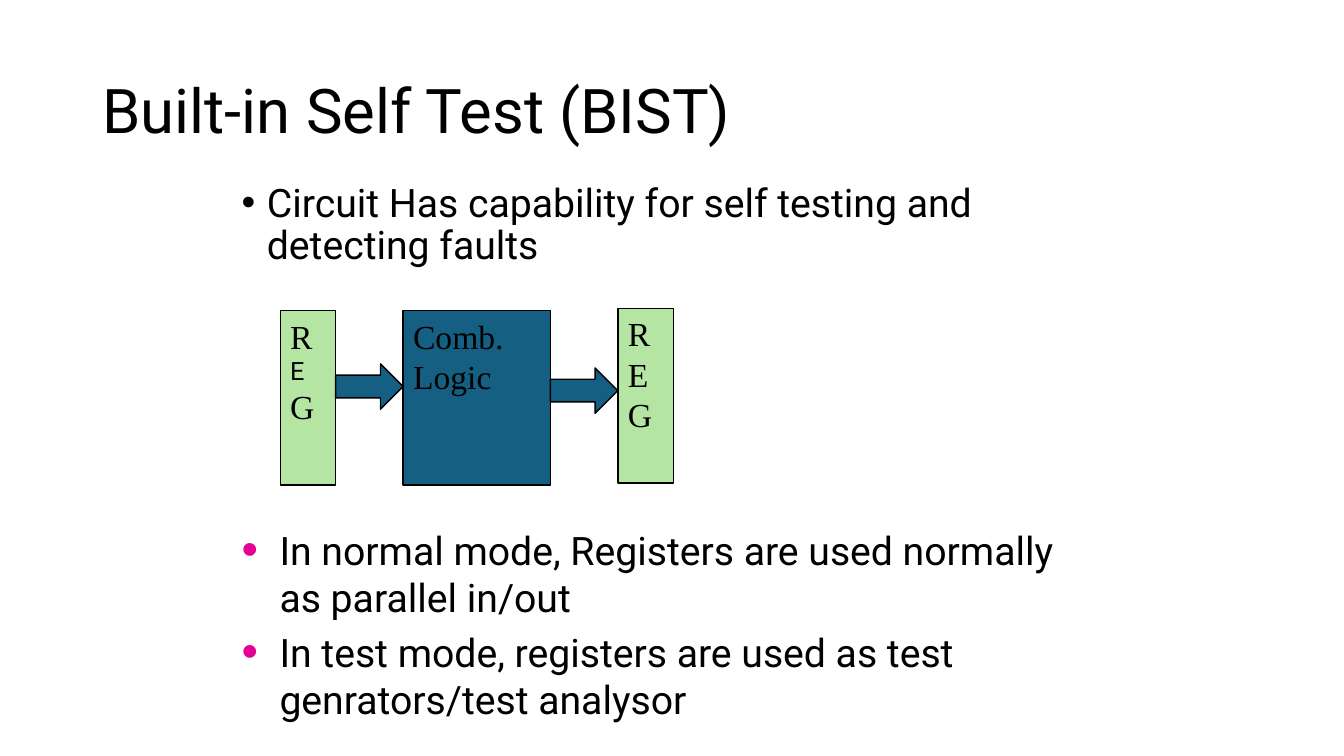
from lxml import etree
from pptx import Presentation
from pptx.dml.color import RGBColor
from pptx.enum import shapes, text
from pptx.oxml import ns
from pptx.util import Pt

# Content: boxes are left, top, width, height in points
TITLE = ("Built-in Self Test (BIST)", (66.2, 28.8, 828, 104.4))
INTRO = (["Circuit Has capability for self testing and detecting faults"],
         (165.6, 127.4, 612, 79.9))
MODES = (["In normal mode, Registers are used normally as parallel in/out",
          "In test mode, registers are used as test genrators/test analysor"],
         (165.6, 372.2, 612, 79.9))
BLACK, BLUE, GREEN, PINK = "000000", "156082", "B4E5A2", "E50093"
SERIF, SANS = "Times New Roman", "Roboto"

# Blocks: left, top, width, fill, lines as (text, font, size)
BLOCK_HEIGHT = 124.6
BLOCKS = [
    (288, 221.8, 105.1, BLUE, [("Comb. Logic", SERIF, 24)]),
    (200.2, 221.8, 39.6, GREEN, [("R", SERIF, 24), ("E", SANS, 18), ("G", SERIF, 24)]),
    (441.4, 220.3, 39.6, GREEN, [("REG", SERIF, 24)]),
]
# Arrows: left, top
ARROWS = [(239.8, 259.9), (393.1, 262.8)]
ARROW_SIZE = (48.2, 32.4)

deck = Presentation()
deck.slide_width, deck.slide_height = Pt(960), Pt(540)
slide = deck.slides.add_slide(deck.slide_layouts[6])


def color(hex_string):
    return RGBColor.from_string(hex_string)


def write(frame, lines):
    """Fill a frame with one paragraph per (text, font, size)."""
    frame.word_wrap = True
    frame.text = "\n".join(words for words, _, _ in lines)
    for paragraph, (_, font, size) in zip(frame.paragraphs, lines):
        paragraph.alignment = text.PP_ALIGN.LEFT
        letters = paragraph.runs[0].font
        letters.name, letters.size = font, Pt(size)
        letters.color.rgb = color(BLACK)


def add_text(box, lines):
    frame = slide.shapes.add_textbox(*map(Pt, box)).text_frame
    write(frame, lines)
    return frame


def add_bullets(bullets, box, indent, before, spacing=None, tint=None):
    frame = add_text(box, [(bullet, SANS, 28) for bullet in bullets])
    for paragraph in frame.paragraphs:
        paragraph.space_before = Pt(before)
        paragraph.line_spacing = spacing
        props = paragraph._p.get_or_add_pPr()
        props.set("marL", str(Pt(indent)))
        props.set("indent", str(Pt(-indent)))
        if tint:
            bullet_color = etree.SubElement(props, ns.qn("a:buClr"))
            etree.SubElement(bullet_color, ns.qn("a:srgbClr"), val=tint)
            etree.SubElement(props, ns.qn("a:buSzPct"), val="120000")
        etree.SubElement(props, ns.qn("a:buFont"), typeface="Arial")
        etree.SubElement(props, ns.qn("a:buChar"), char="•")


def add_outlined(kind, box, fill):
    shape = slide.shapes.add_shape(kind, *map(Pt, box))
    shape.shadow.inherit = False
    shape.fill.solid()
    shape.fill.fore_color.rgb = color(fill)
    shape.line.color.rgb = color(BLACK)
    shape.line.width = Pt(1)
    return shape


# Title and opening bullet
heading = add_text(TITLE[1], [(TITLE[0], SANS, 44)])
heading.vertical_anchor = text.MSO_ANCHOR.MIDDLE
heading.paragraphs[0].line_spacing = 0.9
add_bullets(*INTRO, indent=18, before=10, spacing=0.9)

# Register and logic diagram
for left, top, width, fill, lines in BLOCKS:
    block = add_outlined(shapes.MSO_SHAPE.RECTANGLE, (left, top, width, BLOCK_HEIGHT), fill)
    block.text_frame.vertical_anchor = text.MSO_ANCHOR.TOP
    write(block.text_frame, lines)
for corner in ARROWS:
    add_outlined(shapes.MSO_SHAPE.RIGHT_ARROW, corner + ARROW_SIZE, BLUE)

# Operating modes
add_bullets(*MODES, indent=27, before=5.6, tint=PINK)

deck.save("out.pptx")
